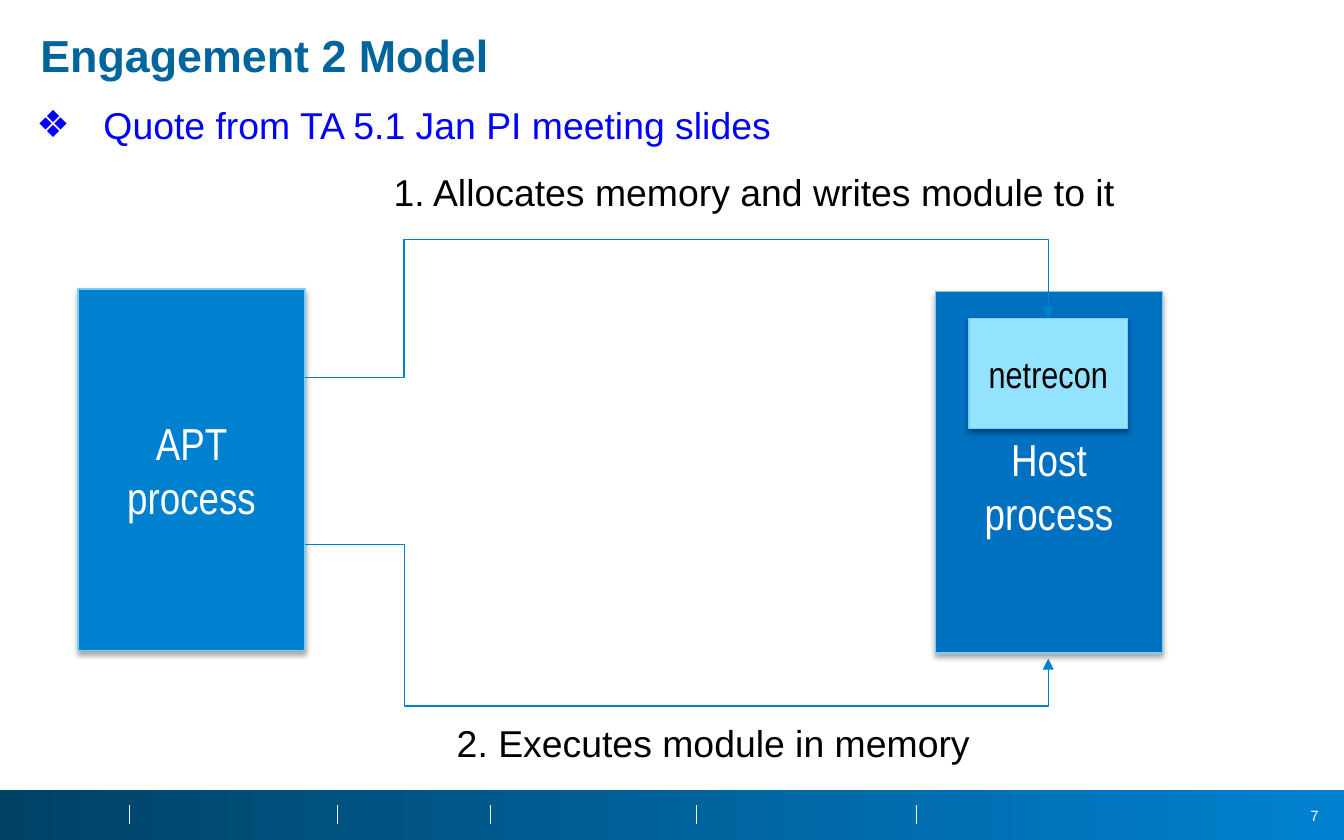
"""Build the Engagement 2 Model slide with its two-step process diagram."""
from dataclasses import dataclass
from lxml import etree
from pptx import Presentation
from pptx.dml.color import RGBColor
from pptx.enum.shapes import MSO_CONNECTOR, MSO_SHAPE
from pptx.enum.text import MSO_ANCHOR, MSO_AUTO_SIZE, PP_ALIGN
from pptx.oxml import parse_xml
from pptx.oxml.ns import qn
from pptx.util import Inches, Pt

RECT = MSO_SHAPE.RECTANGLE
STRAIGHT, ELBOW = MSO_CONNECTOR.STRAIGHT, MSO_CONNECTOR.ELBOW
TOP, MIDDLE = MSO_ANCHOR.TOP, MSO_ANCHOR.MIDDLE
LEFT, CENTER, RIGHT = PP_ALIGN.LEFT, PP_ALIGN.CENTER, PP_ALIGN.RIGHT
NO_FIT = MSO_AUTO_SIZE.NONE
A_NS = "http://schemas.openxmlformats.org/drawingml/2006/main"


@dataclass
class Theme:
    title: str = "00649D"
    list: str = "0000FF"
    blue: str = "0081D0"
    host: str = "0070C0"
    pale: str = "93E3FF"
    edge: str = "7DCDF2"
    navy: str = "004266"
    tick: str = "F2F2F2"
    white: str = "FFFFFF"
    black: str = "000000"
    font: str = "Arial"
    narrow: str = "Arial Narrow"
    big: int = 24
    mid: int = 20
    small: int = 8


theme = Theme()


def write(shape, text, size=theme.mid, color=theme.black, font=theme.font,
          bold=False, align=LEFT, anchor=TOP, spacing=1.0):
    frame = shape.text_frame
    frame.text = text
    frame.word_wrap = True
    frame.auto_size = NO_FIT
    frame.vertical_anchor = anchor
    for para in frame.paragraphs:
        para.alignment = align
        para.line_spacing = spacing
        para.space_before = Pt(0)
        for run in para.runs:
            run.font.name = font
            run.font.size = Pt(size)
            run.font.bold = bold
            run.font.color.rgb = RGBColor.from_string(color)


def link(kind, x1, y1, x2, y2, color, width):
    line = slide.shapes.add_connector(
        kind, Inches(x1), Inches(y1), Inches(x2), Inches(y2))
    line.line.color.rgb = RGBColor.from_string(color)
    line.line.width = Pt(width)
    etree.SubElement(line._element.spPr, qn("a:effectLst"))
    return line


prs = Presentation()
prs.slide_width, prs.slide_height = Inches(10), Inches(6.25)
slide = prs.slides.add_slide(prs.slide_layouts[1])
title, body = slide.placeholders

bar = slide.shapes.add_shape(
    RECT, Inches(0), Inches(5.88), Inches(10), Inches(0.37))
bar.shadow.inherit = False
bar.line.fill.background()
bar.fill.gradient()
bar.fill.gradient_angle = 0
for stop, pos, color in zip(bar.fill.gradient_stops, (0, 1),
                            (theme.navy, theme.blue)):
    stop.position = pos
    stop.color.rgb = RGBColor.from_string(color)

for x in (0.96, 2.51, 3.65, 5.18, 6.82):
    link(STRAIGHT, x, 5.99, x, 6.13, theme.tick, 0.25)

for holder, left, top, width, height in (
        (title, 0.2, 0.2, 9.59, 0.36), (body, 0.17, 0.71, 9.67, 0.44)):
    holder.left, holder.top = Inches(left), Inches(top)
    holder.width, holder.height = Inches(width), Inches(height)

write(title, "Engagement 2 Model", size=theme.big, color=theme.title,
      bold=True, spacing=0.9)
write(body, "Quote from TA 5.1 Jan PI meeting slides", color=theme.list)
props = body.text_frame.paragraphs[0]._p.get_or_add_pPr()
props.set("marL", str(Inches(0.5)))
props.set("indent", str(Inches(-0.5)))
tint = etree.SubElement(props, qn("a:buClr"))
etree.SubElement(tint, qn("a:srgbClr"), val=theme.list)
etree.SubElement(props, qn("a:buFont"), typeface=theme.font)
etree.SubElement(props, qn("a:buChar"), char="❖")

labels = (
    ("1. Allocates memory and writes module to it", 2.83, 1.21, 6.25, 0.44, {}),
    ("2. Executes module in memory", 3.3, 5.31, 4.02, 0.44, {}),
    ("7", 9.49, 5.95, 0.42, 0.24,
     dict(size=theme.small, color=theme.white, align=RIGHT, anchor=MIDDLE)),
)
for text, left, top, width, height, style in labels:
    label = slide.shapes.add_textbox(
        Inches(left), Inches(top), Inches(width), Inches(height))
    write(label, text, **style)

boxes = (
    ("APT\nprocess", 0.58, 2.15, 1.69, 2.69, theme.blue, theme.white,
     theme.big, 0.05),
    ("Host\nprocess", 6.96, 2.17, 1.69, 2.69, theme.host, theme.white,
     theme.big, 0.24),
    ("netrecon", 7.21, 2.37, 1.18, 0.82, theme.pale, theme.black,
     theme.mid, 0.05),
)
routes = ((2.81, 2.37, 13300, 233700), (4.05, 4.9, 13400, 141500))
for text, left, top, width, height, fill, color, size, inset in boxes:
    if text == "netrecon":
        for start, end, across, down in routes:
            arrow = link(ELBOW, 2.27, start, 7.8, end, theme.blue, 0.75)
            etree.SubElement(arrow.line._get_or_add_ln(), qn("a:tailEnd"),
                             type="triangle")
            geom = arrow._element.spPr.find(qn("a:prstGeom"))
            geom.set("prst", "bentConnector4")
            guides = geom.find(qn("a:avLst"))
            for name, value in (("adj1", across), ("adj2", down)):
                etree.SubElement(guides, qn("a:gd"), name=name,
                                 fmla=f"val {value}")
    box = slide.shapes.add_shape(
        RECT, Inches(left), Inches(top), Inches(width), Inches(height))
    box.fill.solid()
    box.fill.fore_color.rgb = RGBColor.from_string(fill)
    box.line.color.rgb = RGBColor.from_string(theme.edge)
    box.line.width = Pt(0.75)
    box.shadow.inherit = False
    box._element.spPr.find(qn("a:effectLst")).append(parse_xml(
        f'<a:outerShdw xmlns:a="{A_NS}" blurRad="{Pt(3.1)}" dist="{Pt(1.8)}"'
        f' dir="5400000" rotWithShape="0"><a:srgbClr val="{theme.black}">'
        '<a:alpha val="35000"/></a:srgbClr></a:outerShdw>'))
    write(box, text, size=size, color=color, font=theme.narrow,
          align=CENTER, anchor=MIDDLE)
    box.text_frame.margin_top = Inches(inset)

prs.save("out.pptx")
